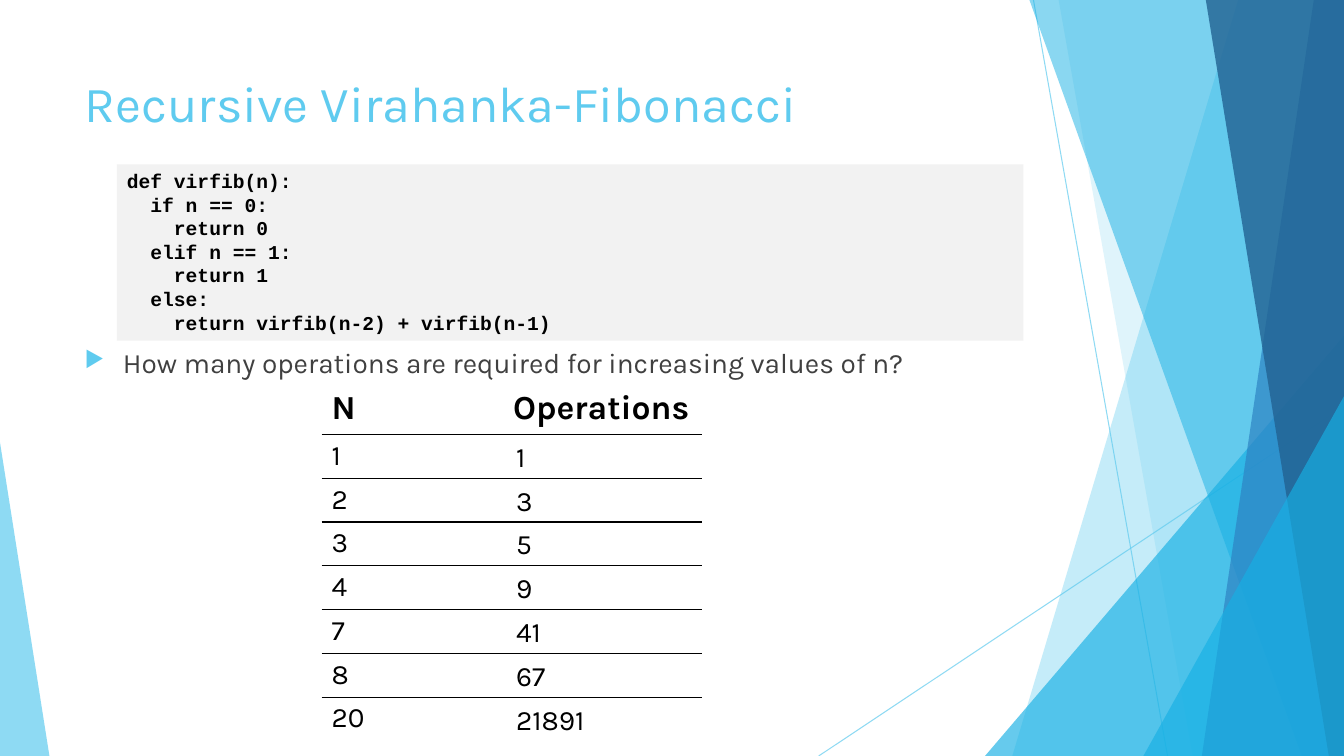
from dataclasses import dataclass

from lxml.etree import SubElement
from pptx import Presentation
from pptx.dml.color import RGBColor
from pptx.enum.shapes import MSO_CONNECTOR, MSO_SHAPE
from pptx.enum.text import MSO_ANCHOR, MSO_AUTO_SIZE
from pptx.oxml import parse_xml
from pptx.oxml.ns import nsdecls, qn
from pptx.util import Inches, Pt

COLORS = {
    "sky": "5FCBEF", "cyan": "17B0E4", "blue": "2E83C3", "navy": "226292",
    "body": "404040", "code": "F2F2F2", "black": "000000",
}
TEXT_FONT, CODE_FONT = "Karla", "Courier New"
NO_STYLE = "{2D5ABB26-0587-4C30-8999-92F81FD0307C}"
WIDTH, HEIGHT = 13.33, 7.5


@dataclass
class Ray:
    start: tuple[float, float]
    end: tuple[float, float]


@dataclass
class Facet:
    corners: list[tuple[float, float]]
    color: str
    opacity: int


@dataclass
class Wedge:
    left: float
    top: float
    width: float
    apex: float
    color: str
    opacity: int


def band(top_left: float, bottom_left: float, color: str, opacity: int) -> Facet:
    """Return a facet that reaches from a slanted left edge to the slide's right edge."""
    return Facet([(top_left, 0), (WIDTH, 0), (WIDTH, HEIGHT), (bottom_left, HEIGHT)], color, opacity)


RAYS = [Ray((10.25, 0), (11.58, HEIGHT)), Ray((WIDTH, 4.03), (8.12, HEIGHT))]
BACKDROP = [
    band(12.28, 10.04, "sky", 36),
    band(10.5, 11.83, "sky", 20),
    Wedge(9.77, 3.33, 3.56, 1, "cyan", 66),
    band(10.21, 12.91, "cyan", 50),
    band(13.03, 11.92, "blue", 70),
    band(11.96, 13.18, "navy", 80),
    Wedge(11.34, 3.93, 1.99, 1, "cyan", 66),
    Wedge(0, 4.39, 0.49, 0, "sky", 70),
]
CODE = """def virfib(n):
  if n == 0:
    return 0
  elif n == 1:
    return 1
  else:
    return virfib(n-2) + virfib(n-1)"""
HEADINGS = ("N", "Operations")
COUNTS = [("1", "1"), ("2", "3"), ("3", "5"), ("4", "9"), ("7", "41"), ("8", "67"), ("20", "21891")]
TABLE_TOP, TABLE_HEIGHT, HEADING_HEIGHT = 3.81, 3.54, 0.5
ROW_HEIGHT = (TABLE_HEIGHT - HEADING_HEIGHT) / len(COUNTS)


def rgb(color: str) -> RGBColor:
    """Look up a named colour."""
    return RGBColor.from_string(COLORS[color])


def set_alpha(element, opacity: int) -> None:
    """Set the opacity of every solid colour inside an element."""
    for srgb in element.iter(qn("a:srgbClr")):
        SubElement(srgb, qn("a:alpha")).set("val", str(opacity * 1000))


def write(paragraph, text: str, size: float, color: str = "black",
          font: str = TEXT_FONT, bold: bool = False) -> None:
    """Add one formatted run to a paragraph."""
    run = paragraph.add_run()
    run.text = text
    run.font.name, run.font.size, run.font.bold = font, Pt(size), bold
    run.font.color.rgb = rgb(color)


def paint(shape, color: str, opacity: int = 100) -> None:
    """Give a shape a flat fill without outline or shadow."""
    shape.shadow.inherit = False
    shape.fill.solid()
    shape.fill.fore_color.rgb = rgb(color)
    shape.line.fill.background()
    if opacity < 100:
        set_alpha(shape.fill._xPr, opacity)


def draw_ray(slide, ray: Ray) -> None:
    """Draw a thin translucent line."""
    line = slide.shapes.add_connector(MSO_CONNECTOR.STRAIGHT, *map(Inches, ray.start + ray.end))
    line.line.color.rgb = rgb("sky")
    line.line.width = Pt(0.75)
    set_alpha(line._element.spPr, 70)
    SubElement(line._element.spPr, qn("a:effectLst"))


def draw_backdrop(slide, piece: Facet | Wedge) -> None:
    """Draw one translucent piece of the backdrop."""
    if isinstance(piece, Facet):
        points = [(Inches(x), Inches(y)) for x, y in piece.corners]
        builder = slide.shapes.build_freeform(*points[0])
        builder.add_line_segments(points[1:], close=True)
        shape = builder.convert_to_shape()
    else:
        shape = slide.shapes.add_shape(
            MSO_SHAPE.ISOSCELES_TRIANGLE, Inches(piece.left), Inches(piece.top),
            Inches(piece.width), Inches(HEIGHT - piece.top))
        shape.adjustments[0] = piece.apex
    paint(shape, piece.color, piece.opacity)


def place_title(slide) -> None:
    """Position and fill the title placeholder."""
    title = slide.shapes.title
    title.left, title.top, title.width, title.height = map(Inches, (0.74, 0.67, 9.4, 1.44))
    frame = title.text_frame
    frame.vertical_anchor = MSO_ANCHOR.TOP
    frame.auto_size = MSO_AUTO_SIZE.NONE
    paragraph = frame.paragraphs[0]
    paragraph._p.get_or_add_pPr().set("algn", "l")
    write(paragraph, "Recursive Virahanka-Fibonacci", 36, "sky")


def draw_question(slide) -> None:
    """Add the bulleted question."""
    question = slide.shapes.add_textbox(*map(Inches, (0.74, 3.38, 9.4, 0.74)))
    question.text_frame.word_wrap = True
    paragraph = question.text_frame.paragraphs[0]
    properties = paragraph._p.get_or_add_pPr()
    properties.set("marL", str(Inches(0.38)))
    properties.set("indent", str(-Inches(0.38)))
    bullet_color = SubElement(properties, qn("a:buClr"))
    SubElement(bullet_color, qn("a:srgbClr")).set("val", COLORS["sky"])
    SubElement(properties, qn("a:buSzPct")).set("val", "80000")
    SubElement(properties, qn("a:buChar")).set("char", "▶")
    write(paragraph, "How many operations are required for increasing values of n?", 20, "body")


def draw_code(slide) -> None:
    """Add the code listing on its grey panel."""
    panel = slide.shapes.add_shape(MSO_SHAPE.RECTANGLE, *map(Inches, (1.16, 1.63, 8.99, 1.75)))
    paint(panel, "code")
    frame = panel.text_frame
    frame.word_wrap = True
    frame.vertical_anchor = MSO_ANCHOR.TOP
    for index, code_line in enumerate(CODE.splitlines()):
        paragraph = frame.add_paragraph() if index else frame.paragraphs[0]
        paragraph._p.get_or_add_pPr().set("algn", "l")
        write(paragraph, code_line, 14, font=CODE_FONT, bold=True)


def draw_table(slide) -> None:
    """Add the ruled table and the operation counts over its second column."""
    table = slide.shapes.add_table(
        len(COUNTS) + 1, 2, *map(Inches, (3.19, TABLE_TOP, 3.77, TABLE_HEIGHT))).table
    table.first_row = table.horz_banding = False
    table._tbl.tblPr.find(qn("a:tableStyleId")).text = NO_STYLE
    table.columns[0].width, table.columns[1].width = Inches(1.8), Inches(1.97)
    for index, row in enumerate(table.rows):
        row.height = Inches(ROW_HEIGHT if index else HEADING_HEIGHT)
        for cell in row.cells:
            cell.fill.background()
            if index < len(COUNTS):
                cell._tc.get_or_add_tcPr().insert(0, parse_xml(
                    f'<a:lnB {nsdecls("a")} w="{Pt(1)}"><a:solidFill>'
                    f'<a:srgbClr val="{COLORS["black"]}"/></a:solidFill></a:lnB>'))
    for column, heading in enumerate(HEADINGS):
        write(table.cell(0, column).text_frame.paragraphs[0], heading, 24, bold=True)
    for index, (n, operations) in enumerate(COUNTS):
        write(table.cell(index + 1, 0).text_frame.paragraphs[0], n, 20)
        top = TABLE_TOP + HEADING_HEIGHT + index * ROW_HEIGHT
        width = 0.2 + 0.15 * len(operations)
        count = slide.shapes.add_textbox(*map(Inches, (5.02, top, width, 0.44)))
        count.text_frame.word_wrap = False
        write(count.text_frame.paragraphs[0], operations, 20)


def main() -> None:
    """Build the slide and save it."""
    deck = Presentation()
    deck.slide_width, deck.slide_height = Inches(WIDTH), Inches(HEIGHT)
    slide = deck.slides.add_slide(deck.slide_layouts[5])
    for ray in RAYS:
        draw_ray(slide, ray)
    for piece in BACKDROP:
        draw_backdrop(slide, piece)
    place_title(slide)
    draw_question(slide)
    draw_code(slide)
    draw_table(slide)
    deck.save("out.pptx")


if __name__ == "__main__":
    main()
